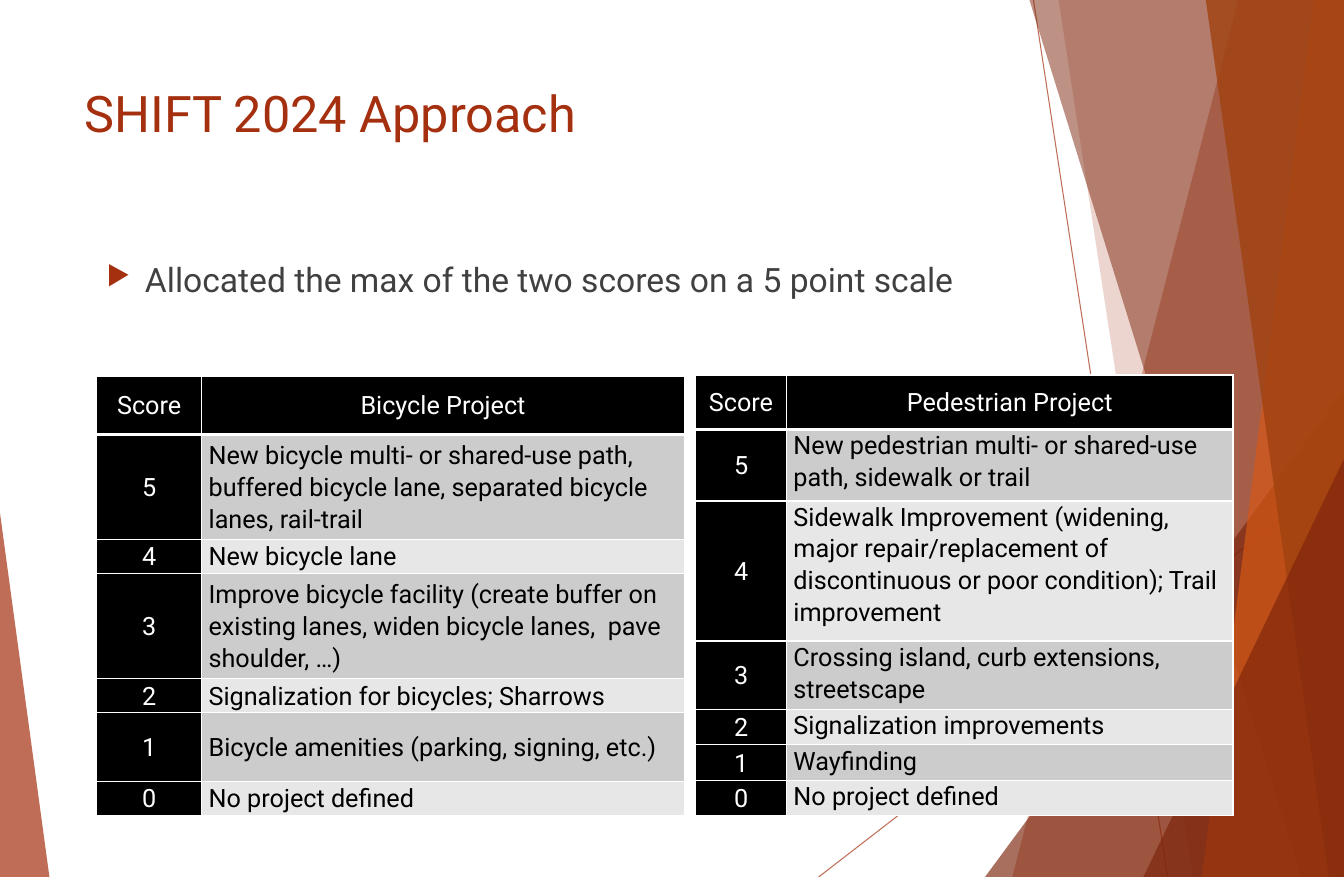
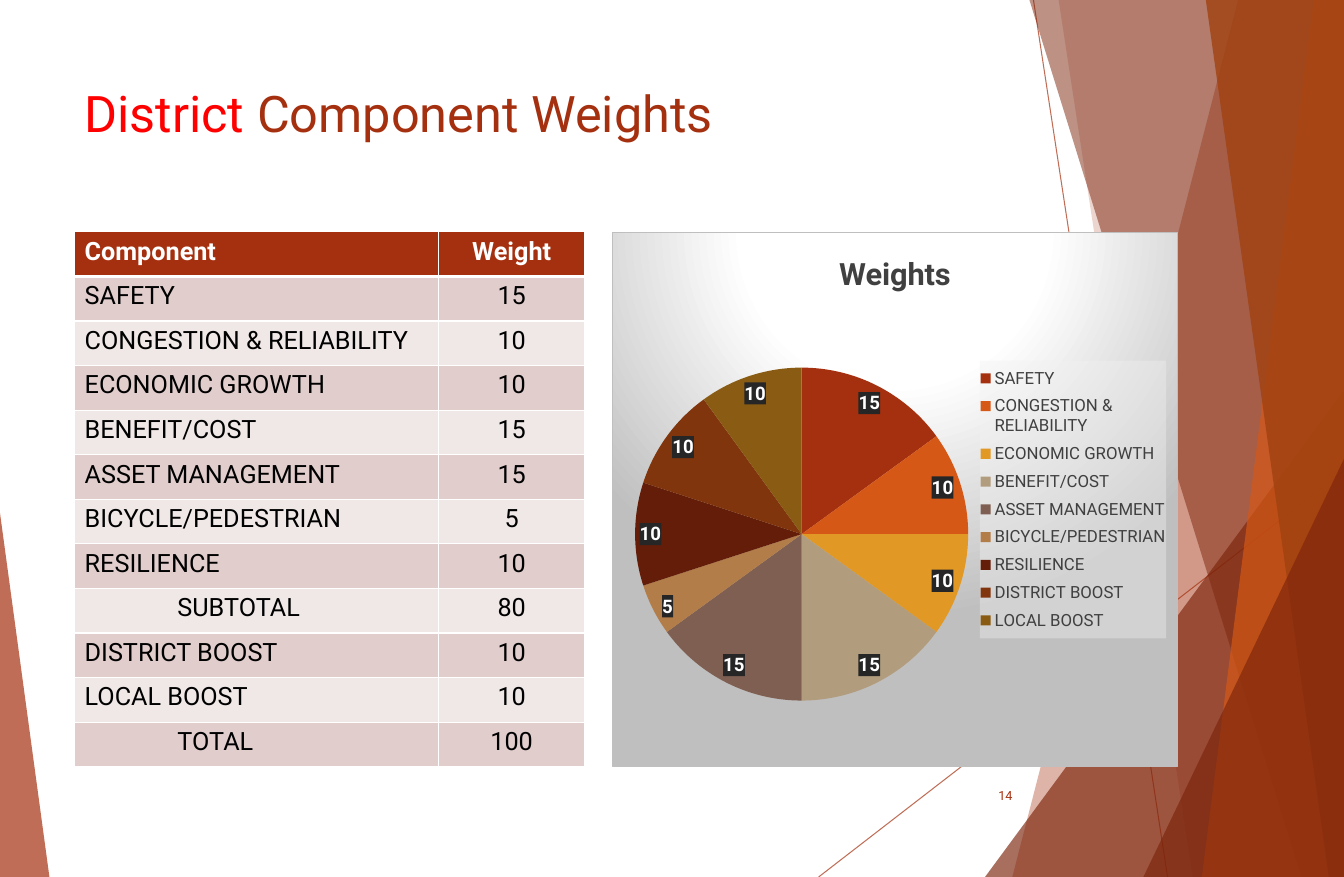
from lxml import etree
from pptx import Presentation
from pptx.chart.data import CategoryChartData
from pptx.dml.color import RGBColor
from pptx.enum.chart import XL_CHART_TYPE, XL_LABEL_POSITION, XL_LEGEND_POSITION
from pptx.enum.shapes import MSO_CONNECTOR, MSO_SHAPE
from pptx.enum.text import MSO_ANCHOR, PP_ALIGN
from pptx.oxml import parse_xml
from pptx.oxml.ns import nsdecls, qn
from pptx.util import Inches, Pt

WIDTH, HEIGHT = 13.33, 8.7
FONT = "Roboto"
RUST, DARK_RUST, ORANGE, BROWN = "A5300F", "7C240B", "D55816", "A04210"
WHITE, BLACK, GRAY, SILVER, RED = "FFFFFF", "000000", "404040", "BFBFBF", "FF0000"
GRAY_STRIPES = ("CCCCCC", "E7E7E7")
ROSE_STRIPES = ("E1CDCC", "F0E8E7")
SLICES = (RUST, ORANGE, "E19825", "B19C7D", "7F5F52", "B27D49", "631D09", "80350D", "8A5C13")

LEFT, CENTER, RIGHT = PP_ALIGN.LEFT, PP_ALIGN.CENTER, PP_ALIGN.RIGHT
TOP, MIDDLE = MSO_ANCHOR.TOP, MSO_ANCHOR.MIDDLE
STRAIGHT = MSO_CONNECTOR.STRAIGHT
TRIANGLE = MSO_SHAPE.ISOSCELES_TRIANGLE
PIE = XL_CHART_TYPE.PIE
BEST_FIT = XL_LABEL_POSITION.BEST_FIT
LEGEND_RIGHT = XL_LEGEND_POSITION.RIGHT

RAYS = [((10.25, 0), (11.58, HEIGHT)), ((WIDTH, 4.67), (8.12, HEIGHT))]
FACETS = [
    ("band", 12.28, 10.04, RUST, 36),
    ("band", 10.5, 11.83, RUST, 20),
    ("triangle", 9.77, 3.87, DARK_RUST, 66),
    ("band", 10.21, 12.91, DARK_RUST, 50),
    ("band", 13.03, 11.92, ORANGE, 70),
    ("band", 11.96, 13.18, BROWN, 80),
    ("triangle", 11.34, 4.55, DARK_RUST, 66),
]

BICYCLE = [
    "New bicycle multi- or shared-use path, buffered bicycle lane, separated bicycle lanes, rail-trail",
    "New bicycle lane",
    "Improve bicycle facility (create buffer on existing lanes, widen bicycle lanes,  pave shoulder, …)",
    "Signalization for bicycles; Sharrows",
    "Bicycle amenities (parking, signing, etc.)",
    "No project defined",
]
PEDESTRIAN = [
    "New pedestrian multi- or shared-use path, sidewalk or trail",
    "Sidewalk Improvement (widening, major repair/replacement of discontinuous or poor condition); Trail improvement",
    "Crossing island, curb extensions, streetscape",
    "Signalization improvements",
    "Wayfinding",
    "No project defined",
]
COMPONENTS = [
    ("SAFETY", 15),
    ("CONGESTION & RELIABILITY", 10),
    ("ECONOMIC GROWTH", 10),
    ("BENEFIT/COST", 15),
    ("ASSET MANAGEMENT", 15),
    ("BICYCLE/PEDESTRIAN", 5),
    ("RESILIENCE", 10),
]
BOOSTS = [("DISTRICT BOOST", 10), ("LOCAL BOOST", 10)]


def rgb(color):
    return RGBColor.from_string(color)


def style_font(font, size, color, bold=False):
    font.name = FONT
    font.size = Pt(size)
    font.bold = bold
    font.color.rgb = rgb(color)


def add_span(para, text, size=18, color=BLACK, bold=False):
    span = para.add_run()
    span.text = text
    style_font(span.font, size, color, bold)


def add_box(page, left, top, width, height, spans, align=LEFT, anchor=TOP):
    box = page.shapes.add_textbox(Inches(left), Inches(top), Inches(width), Inches(height))
    box.text_frame.word_wrap = True
    box.text_frame.vertical_anchor = anchor
    para = box.text_frame.paragraphs[0]
    para.alignment = align
    for text, size, color in spans:
        add_span(para, text, size, color)
    return para


def indent(para, left, first=0):
    properties = para._p.get_or_add_pPr()
    properties.set("marL", str(Inches(left)))
    properties.set("indent", str(Inches(first)))
    return properties


def add_bullet(para):
    properties = indent(para, 0.38, -0.38)
    color = etree.SubElement(properties, qn("a:buClr"))
    etree.SubElement(color, qn("a:srgbClr"), val=RUST)
    etree.SubElement(properties, qn("a:buSzPct"), val="80000")
    etree.SubElement(properties, qn("a:buChar"), char="▶")


def set_opacity(shape, percent):
    for color in shape.element.iter(qn("a:srgbClr")):
        etree.SubElement(color, qn("a:alpha"), val=str(percent * 1000))


def finish_facet(shape, color, opacity):
    shape.shadow.inherit = False
    shape.fill.solid()
    shape.fill.fore_color.rgb = rgb(color)
    shape.line.fill.background()
    set_opacity(shape, opacity)


def add_ray(page, start, end):
    ray = page.shapes.add_connector(STRAIGHT, *(Inches(value) for value in start + end))
    ray.line.width = Pt(0.75)
    ray.line.color.rgb = rgb(RUST)
    etree.SubElement(ray.element.spPr, qn("a:effectLst"))
    set_opacity(ray, 70)


def add_band(page, top_x, bottom_x, color, opacity):
    builder = page.shapes.build_freeform(Inches(top_x), 0)
    corners = [(WIDTH, 0), (WIDTH, HEIGHT), (bottom_x, HEIGHT)]
    builder.add_line_segments([(Inches(x), Inches(y)) for x, y in corners], close=True)
    finish_facet(builder.convert_to_shape(), color, opacity)


def add_triangle(page, left, top, right, apex, color, opacity):
    triangle = page.shapes.add_shape(
        TRIANGLE, Inches(left), Inches(top), Inches(right - left), Inches(HEIGHT - top))
    triangle.adjustments[0] = apex
    finish_facet(triangle, color, opacity)


def add_page(deck, title):
    page = deck.slides.add_slide(deck.slide_layouts[6])
    for start, end in RAYS:
        add_ray(page, start, end)
    for kind, first, second, color, opacity in FACETS:
        if kind == "band":
            add_band(page, first, second, color, opacity)
        else:
            add_triangle(page, first, second, WIDTH, 1, color, opacity)
    add_triangle(page, 0, 5.09, 0.49, 0, RUST, 70)
    add_box(page, 0.74, 0.77, 9.4, 1.68, [(text, 36, color) for text, color in title])
    return page


def add_borders(cell_element, bottom):
    properties = cell_element.get_or_add_tcPr()
    for place, (side, width) in enumerate([("L", 1), ("R", 1), ("T", 1), ("B", bottom)]):
        properties.insert(place, parse_xml(
            f'<a:ln{side} {nsdecls("a")} w="{Pt(width)}"><a:solidFill>'
            f'<a:srgbClr val="{WHITE}"/></a:solidFill></a:ln{side}>'))


def add_grid(page, left, top, widths, heights, rows):
    frame = page.shapes.add_table(
        len(rows), len(widths), Inches(left), Inches(top),
        Inches(sum(widths)), Inches(sum(heights)))
    table = frame.table
    for column, width in zip(table.columns, widths):
        column.width = Inches(width)
    for row, height in zip(table.rows, heights):
        row.height = Inches(height)
    for index, element in enumerate(frame.element.iter(qn("a:tc"))):
        add_borders(element, 3 if index < len(widths) else 1)
    return table


def fill_cell(cell, text, fill, color=BLACK, bold=False, align=LEFT, anchor=TOP):
    cell.fill.solid()
    cell.fill.fore_color.rgb = rgb(fill)
    cell.vertical_anchor = anchor
    para = cell.text_frame.paragraphs[0]
    para.alignment = align
    add_span(para, text, color=color, bold=bold)
    return para


def add_score_table(page, left, top, widths, heights, heading, projects, anchor):
    rows = [("Score", heading)]
    rows += [(str(5 - index), project) for index, project in enumerate(projects)]
    table = add_grid(page, left, top, widths, heights, rows)
    for row, texts in enumerate(rows):
        for column, text in enumerate(texts):
            cell = table.cell(row, column)
            cell.margin_left = cell.margin_right = Inches(0.07)
            cell.margin_top = cell.margin_bottom = 0
            if row == 0 or column == 0:
                para = fill_cell(cell, text, BLACK, WHITE, align=CENTER, anchor=MIDDLE)
            else:
                para = fill_cell(cell, text, GRAY_STRIPES[(row - 1) % 2], anchor=anchor)
            para.line_spacing = 1.07
            para.space_after = Pt(8)


def add_weight_table(page):
    subtotal = sum(weight for _, weight in COMPONENTS)
    total = subtotal + sum(weight for _, weight in BOOSTS)
    rows = [("Component", "Weight"), *COMPONENTS, ("SUBTOTAL", subtotal),
            *BOOSTS, ("TOTAL", total)]
    table = add_grid(page, 0.74, 2.3, [3.61, 1.45], [5.31 / len(rows)] * len(rows), rows)
    for row, texts in enumerate(rows):
        for column, text in enumerate(texts):
            fill, color = (ROSE_STRIPES[(row - 1) % 2], BLACK) if row else (RUST, WHITE)
            para = fill_cell(table.cell(row, column), str(text), fill, color,
                             bold=row == 0, align=CENTER if column else LEFT)
            if text in ("SUBTOTAL", "TOTAL"):
                indent(para, 0.92)


def solid_fill(color, opacity):
    return (f'<a:solidFill><a:srgbClr val="{color}"><a:alpha val="{opacity * 1000}"/>'
            '</a:srgbClr></a:solidFill>')


def set_background(parent, content):
    parent.find(qn("c:txPr")).addprevious(
        parse_xml(f'<c:spPr {nsdecls("c", "a")}>{content}</c:spPr>'))


def manual_layout(x, y, width, height, inner=False):
    target = '<c:layoutTarget val="inner"/>' if inner else ""
    values = "".join(f'<c:{name} val="{value}"/>' for name, value in
                     [("x", x), ("y", y), ("w", width), ("h", height)])
    return parse_xml(
        f'<c:layout {nsdecls("c")}><c:manualLayout>{target}<c:xMode val="edge"/>'
        f'<c:yMode val="edge"/>{values}</c:manualLayout></c:layout>')


def add_weight_chart(page):
    data = CategoryChartData()
    data.categories = [name for name, _ in COMPONENTS + BOOSTS]
    data.add_series("Weights", [weight for _, weight in COMPONENTS + BOOSTS])
    chart = page.shapes.add_chart(
        PIE, Inches(6.07), Inches(2.3), Inches(5.61), Inches(5.31), data).chart
    style_font(chart.font, 10, BLACK)
    chart.has_title = True
    add_span(chart.chart_title.text_frame.paragraphs[0], "Weights", 22, GRAY, True)

    chart.has_legend = True
    chart.legend.position = LEGEND_RIGHT
    chart.legend.include_in_layout = False
    style_font(chart.legend.font, 12, GRAY)

    plot = chart.plots[0]
    plot.vary_by_categories = True
    for index, color in enumerate(SLICES):
        slice_fill = plot.series[0].points[index].format.fill
        slice_fill.solid()
        slice_fill.fore_color.rgb = rgb(color)
    labels = plot.series[0].data_labels
    labels.show_value = True
    labels.position = BEST_FIT
    style_font(labels.font, 13.3, WHITE, True)

    root = chart.element
    legend = root.find(".//" + qn("c:legend"))
    plot_area = root.find(".//" + qn("c:plotArea"))
    for parent in (legend, plot_area):
        for layout in parent.findall(qn("c:layout")):
            parent.remove(layout)
    legend.find(qn("c:legendPos")).addnext(manual_layout(0.66, 0.24, 0.33, 0.52))
    plot_area.insert(0, manual_layout(0.04, 0.25, 0.59, 0.63, inner=True))
    set_background(legend, solid_fill("F2F2F2", 39))
    set_background(root.find(".//" + qn("c:dLbls")), solid_fill("262626", 75))
    stops = "".join(f'<a:gs pos="{place * 1000}"><a:srgbClr val="{color}"/></a:gs>'
                    for place, color in [(0, WHITE), (39, WHITE), (100, SILVER)])
    set_background(root, (
        f'<a:gradFill><a:gsLst>{stops}</a:gsLst><a:path path="circle">'
        '<a:fillToRect l="50000" t="-80000" r="50000" b="180000"/></a:path></a:gradFill>'
        f'<a:ln w="{Pt(0.75)}">{solid_fill(SILVER, 100)}</a:ln>'))


def main():
    deck = Presentation()
    deck.slide_width, deck.slide_height = Inches(WIDTH), Inches(HEIGHT)

    page = add_page(deck, [("SHIFT 2024 Approach", RUST)])
    add_bullet(add_box(page, 0.96, 2.52, 12.37, 4.67, [
        ("Allocated the max of the two scores on a 5 point scale", 24, GRAY)]))
    add_score_table(page, 0.96, 3.73, [1.04, 4.79], [0.58, 1.04, 0.34, 1.04, 0.34, 0.68, 0.34],
                    "Bicycle Project", BICYCLE, MIDDLE)
    add_score_table(page, 6.9, 3.72, [0.9, 4.43], [0.54, 0.71, 1.39, 0.68, 0.35, 0.35, 0.35],
                    "Pedestrian Project", PEDESTRIAN, TOP)

    page = add_page(deck, [("District ", RED), ("Component Weights", RUST)])
    add_box(page, 9.39, 7.66, 0.75, 0.46, [("14", 9, RUST)], RIGHT, MIDDLE)
    add_weight_table(page)
    add_weight_chart(page)
    deck.save("out.pptx")


if __name__ == "__main__":
    main()
